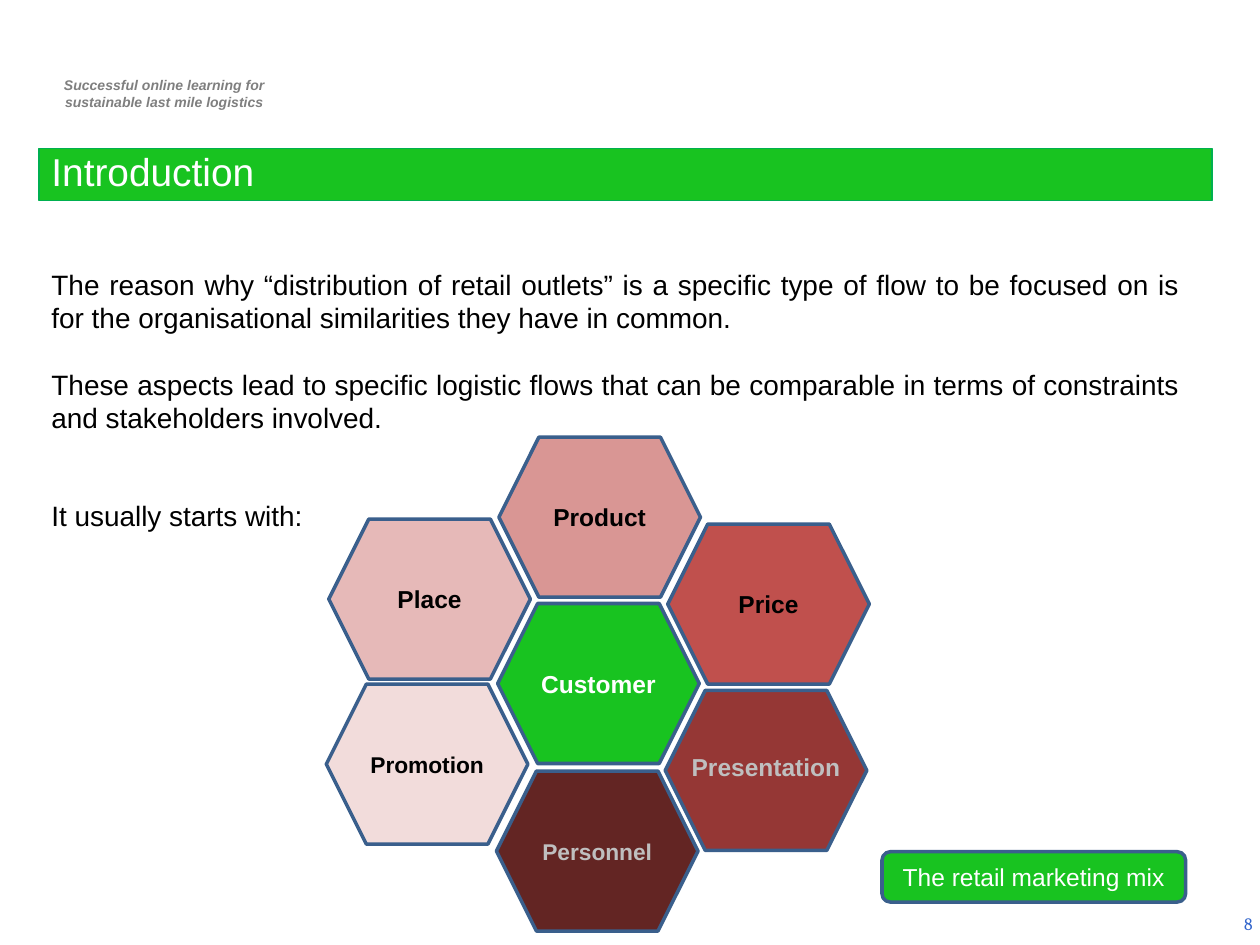
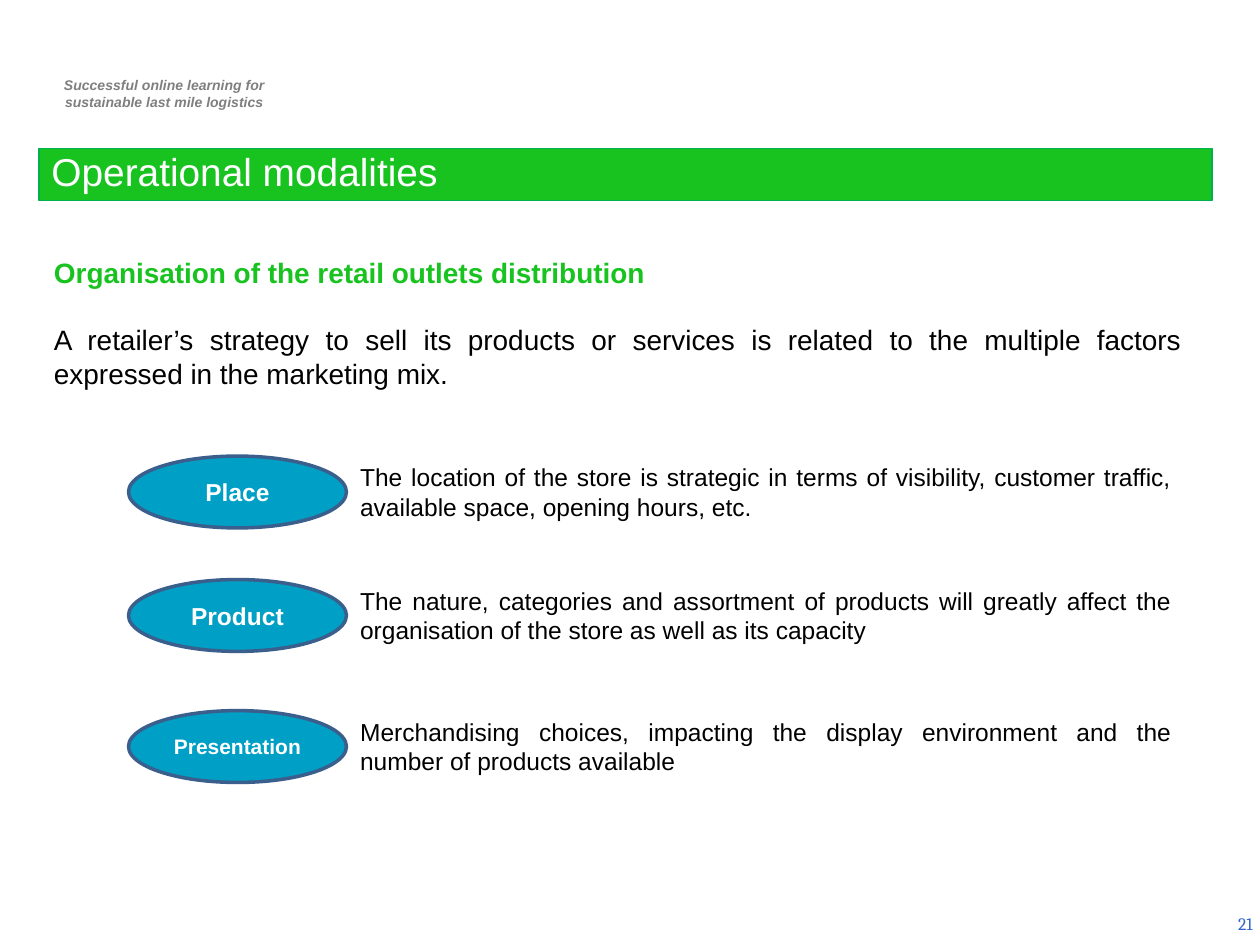
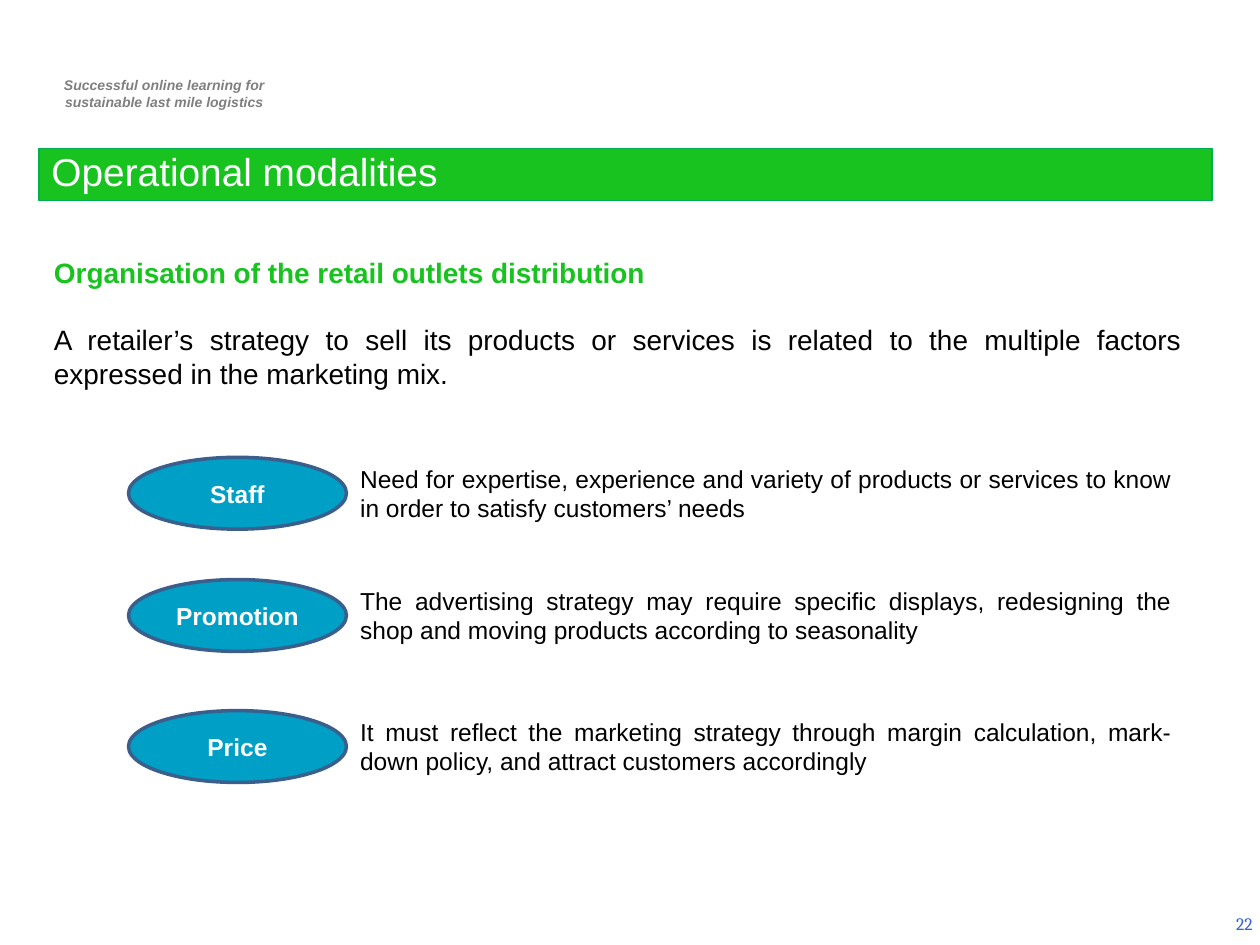
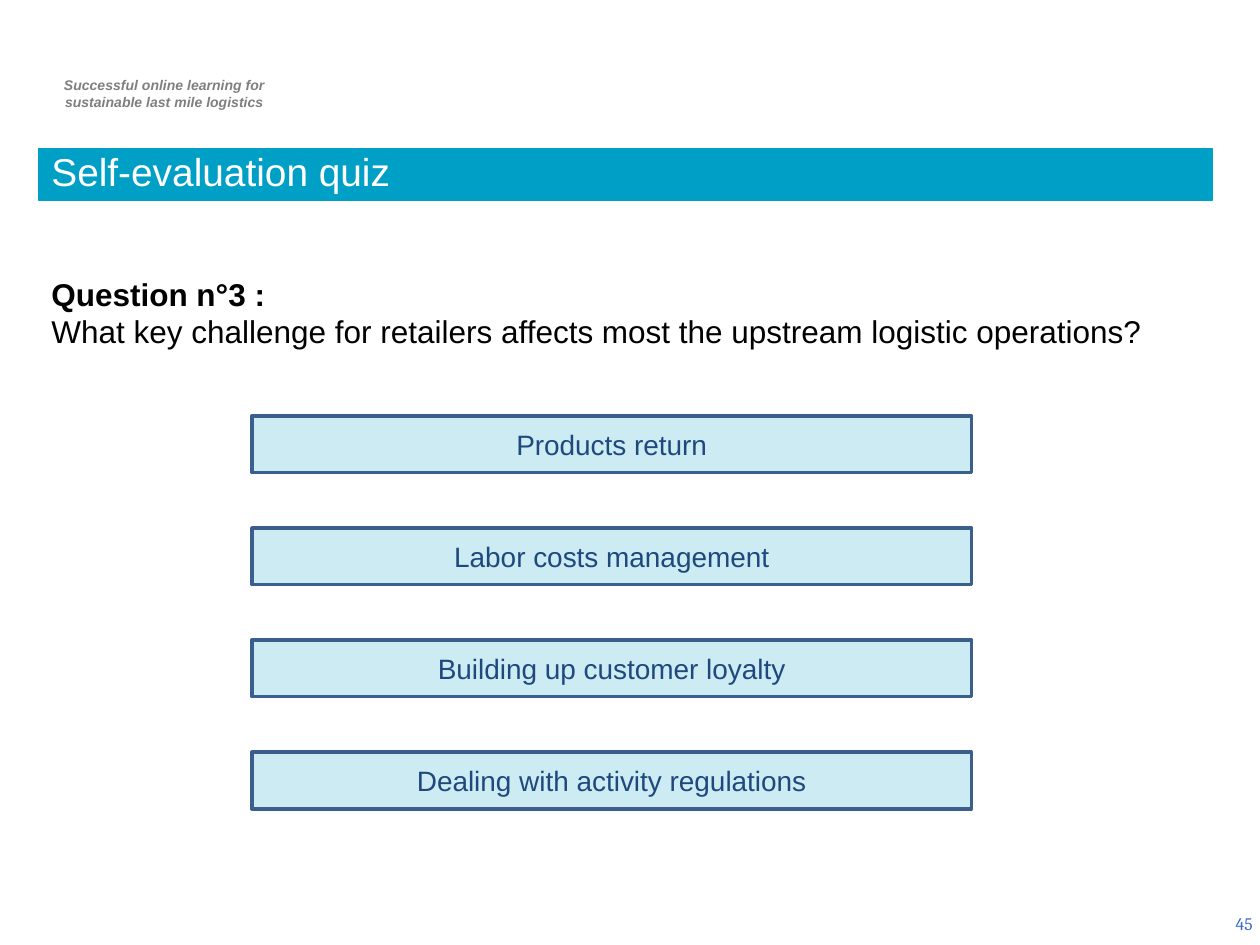
from lxml import etree
from pptx import Presentation
from pptx.dml.color import RGBColor
from pptx.enum import shapes, text
from pptx.oxml.ns import qn
from pptx.util import Inches, Pt

COLORS = {
    "green": "18C320", "green_edge": "00B050", "blue": "009FC6", "edge": "3A5F8C",
    "navy": "1F497D", "page": "3366CC", "gray": "7F7F7F", "silver": "BFBFBF",
    "white": "FFFFFF", "black": "000000", "rose1": "F2DCDB", "rose2": "E6B9B8",
    "rose3": "D99694", "red": "C0504D", "red_dark": "953735", "maroon": "632523",
}
SHAPE = shapes.MSO_SHAPE
ALIGN = text.PP_ALIGN
ANCHOR = text.MSO_ANCHOR

TAGLINE = ["Successful online learning for", "sustainable last mile logistics"]
INTRO = [
    "The reason why “distribution of retail outlets” is a specific type of flow to be "
    "focused on is for the organisational similarities they have in common.",
    "These aspects lead to specific logistic flows that can be comparable in terms of "
    "constraints and stakeholders involved.",
]
STARTS = "It usually starts with:"
MIX_CAPTION = "The retail marketing mix"
HEXAGON_SIZE = (1.6, 1.27)
HEXAGONS = [
    ("Customer", 3.95, 4.79, "green", "white", 14),
    ("Promotion", 2.59, 5.43, "rose1", "black", 13),
    ("Place", 2.61, 4.12, "rose2", "black", 14),
    ("Price", 5.3, 4.16, "red", "black", 14),
    ("Personnel", 3.94, 6.12, "maroon", "silver", 13),
    ("Product", 3.96, 3.47, "rose3", "black", 14),
    ("", 5.28, 5.48, "red_dark", "silver", 14),
]
WIDE_LABEL = "Presentation"

ORGANISATION = [
    "Organisation of the retail outlets distribution",
    "A retailer’s strategy to sell its products or services is related to the multiple "
    "factors expressed in the marketing mix.",
]
FACTOR_PAGES = [
    (21, [
        ("Place", 14, 3.62, "The location of the store is strategic in terms of visibility, "
         "customer traffic, available space, opening hours, etc."),
        ("Product", 14, 4.6, "The nature, categories and assortment of products will greatly "
         "affect the organisation of the store as well as its capacity"),
        ("Presentation", 12, 5.64, "Merchandising choices, impacting the display environment "
         "and the number of products available"),
    ]),
    (22, [
        ("Staff", 14, 3.63, "Need for expertise, experience and variety of products or "
         "services to know in order to satisfy customers’ needs"),
        ("Promotion", 14, 4.6, "The advertising strategy may require specific displays, "
         "redesigning the shop and moving products according to seasonality"),
        ("Price", 14, 5.64, "It must reflect the marketing strategy through margin "
         "calculation, mark-down policy, and attract customers accordingly"),
    ]),
]
QUESTION = [
    "Question n°3 :",
    "What key challenge for retailers affects most the upstream logistic operations?",
]
ANSWERS = ["Products return", "Labor costs management", "Building up customer loyalty",
           "Dealing with activity regulations"]
ANSWER_TOP, ANSWER_STEP = 3.3, 0.89


def rgb(name):
    return RGBColor.from_string(COLORS[name])


def write(sp, lines, size, color="black", bold=False, italic=False, font="Arial",
          align=ALIGN.LEFT, anchor=ANCHOR.TOP, gap=0):
    tf = sp.text_frame
    tf.word_wrap = True
    tf.vertical_anchor = anchor
    tf.text = "\n".join(lines)
    for i, p in enumerate(tf.paragraphs):
        p.alignment = align
        if i and gap:
            p.space_before = Pt(gap)
        for r in p.runs:
            f = r.font
            f.name, f.size, f.bold, f.italic = font, Pt(size), bold, italic
            f.color.rgb = rgb(color)
    return tf


def add_text(s, box, lines, size, **style):
    sp = s.shapes.add_textbox(*map(Inches, box))
    return write(sp, lines, size, **style)


def add_box(s, kind, box, fill, label, size, line="edge", width=2, alpha=None, **style):
    sp = s.shapes.add_shape(kind, *map(Inches, box))
    sp.shadow.inherit = False
    sp.fill.solid()
    sp.fill.fore_color.rgb = rgb(fill)
    sp.line.color.rgb = rgb(line)
    sp.line.width = Pt(width)
    if alpha:
        clr = sp.fill._xPr.find(qn("a:solidFill"))[0]
        etree.SubElement(clr, qn("a:alpha"), val=str(alpha * 1000))
    if label:
        style = {"align": ALIGN.CENTER, "anchor": ANCHOR.MIDDLE, "color": "white", **style}
        write(sp, [label], size, **style)
    return sp


def add_slide(prs, title, number, fill="green", line="green_edge"):
    s = prs.slides.add_slide(prs.slide_layouts[6])
    add_text(s, (0.29, 0.56, 2.03, 0.37), TAGLINE, 8, color="gray", bold=True, italic=True,
             align=ALIGN.CENTER)
    add_text(s, (7.71, 7.13, 2.33, 0.4), [str(number)], 10, color="page", font="Cambria",
             align=ALIGN.RIGHT, anchor=ANCHOR.MIDDLE)
    band = add_box(s, SHAPE.RECTANGLE, (0.31, 1.18, 9.31, 0.41), fill, title, 22.2, line=line,
                   width=0.75, align=ALIGN.LEFT, anchor=ANCHOR.BOTTOM)
    band.text_frame.paragraphs[0].line_spacing = 0.8
    return s


def add_introduction(prs):
    s = add_slide(prs, "Introduction", 8)
    add_text(s, (0.31, 2.07, 9.15, 1.45), INTRO, 16, align=ALIGN.JUSTIFY, gap=19)
    for label, x, y, fill, color, size in HEXAGONS:
        add_box(s, SHAPE.HEXAGON, (x, y, *HEXAGON_SIZE), fill, label, size, color=color,
                bold=True)
    add_text(s, (5.16, 5.92, 1.84, 0.34), [WIDE_LABEL], 14, color="silver", bold=True,
             align=ALIGN.CENTER)
    add_box(s, SHAPE.ROUNDED_RECTANGLE, (7, 6.76, 2.41, 0.4), "green", MIX_CAPTION, 14)
    add_text(s, (0.31, 3.91, 2.66, 0.37), [STARTS], 16)


def add_factors(prs, number, factors):
    s = add_slide(prs, "Operational modalities", number)
    tf = add_text(s, (0.33, 1.98, 9.15, 1.18), ORGANISATION, 16, align=ALIGN.JUSTIFY, gap=19)
    heading = tf.paragraphs[0].runs[0].font
    heading.bold = True
    heading.color.rgb = rgb("green")
    for label, size, y, description in factors:
        add_box(s, SHAPE.OVAL, (1.02, y, 1.73, 0.57), "blue", label, size, bold=True)
        add_text(s, (2.76, y, 6.64, 0.57), [description], 14, align=ALIGN.JUSTIFY)


def add_quiz(prs):
    s = add_slide(prs, "Self-evaluation quiz", 45, "blue", "blue")
    tf = add_text(s, (0.31, 2.13, 9.31, 0.71), QUESTION, 18)
    tf.paragraphs[0].runs[0].font.bold = True
    for i, answer in enumerate(ANSWERS):
        add_box(s, SHAPE.RECTANGLE, (2, ANSWER_TOP + i * ANSWER_STEP, 5.71, 0.45), "blue",
                answer, 16, alpha=20, color="navy")


def main():
    prs = Presentation()
    prs.slide_width, prs.slide_height = Inches(10), Inches(7.5)
    add_introduction(prs)
    for number, factors in FACTOR_PAGES:
        add_factors(prs, number, factors)
    add_quiz(prs)
    prs.save("out.pptx")


if __name__ == "__main__":
    main()
